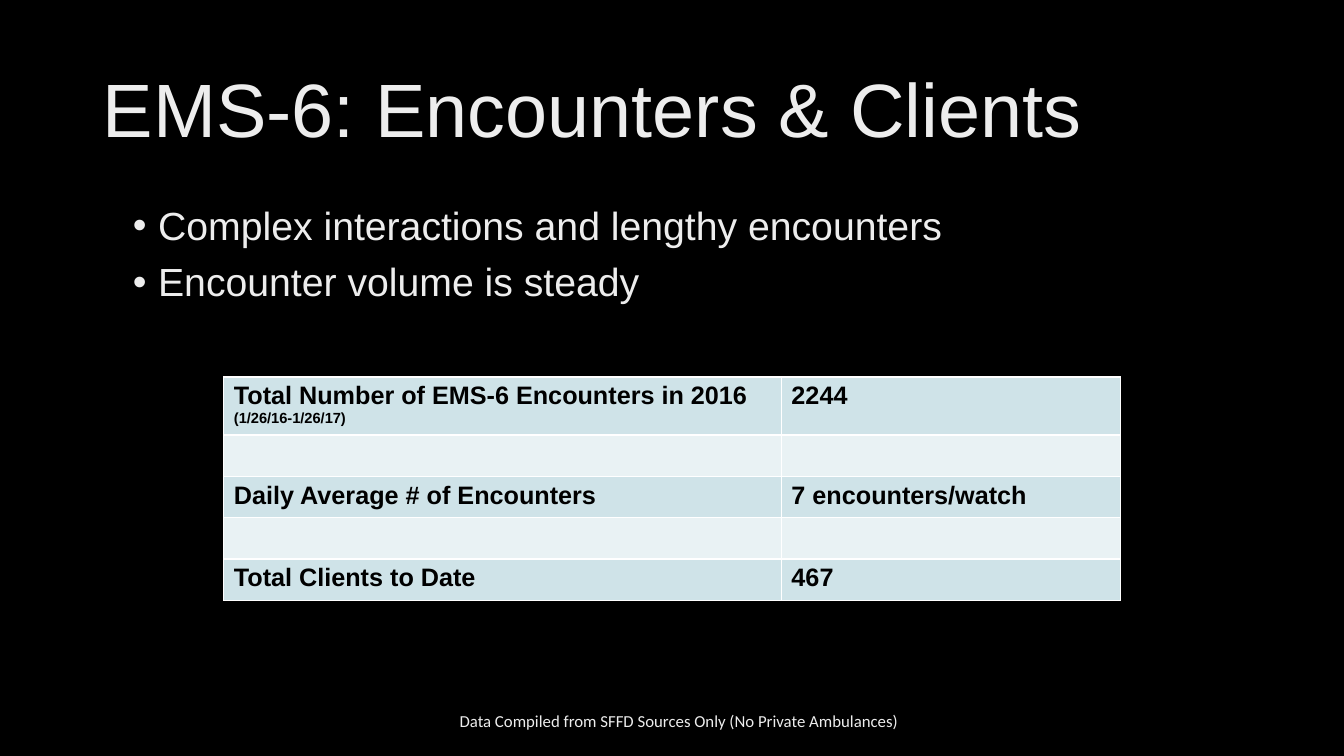
from lxml import etree
from pptx import Presentation
from pptx.dml.color import RGBColor
from pptx.enum.text import MSO_ANCHOR, PP_ALIGN
from pptx.oxml.ns import qn
from pptx.util import Pt

PX = 9144
TOP, MIDDLE = MSO_ANCHOR.TOP, MSO_ANCHOR.MIDDLE
LEFT, CENTER = PP_ALIGN.LEFT, PP_ALIGN.CENTER

PALE = "EDEDED"
BANDS = ["CFE3E8", "E9F2F4"]
TITLE = {"size": Pt(54), "name": "Arial"}
BODY = {"size": Pt(28), "name": "Arial"}
NOTE = {"size": Pt(12), "name": "Calibri"}
LABEL = {"size": Pt(18), "name": "Arial", "bold": True}
DATES = {**LABEL, "size": Pt(10.5)}

POINTS = ["Complex interactions and lengthy encounters", "Encounter volume is steady"]
ROWS = [
    (["Total Number of EMS-6 Encounters in 2016", "(1/26/16-1/26/17)"], ["2244"]),
    ([], []),
    (["Daily Average # of Encounters"], ["7 encounters/watch"]),
    ([], []),
    (["Total Clients to Date"], ["467"]),
]


def color(code):
    return RGBColor.from_string(code)


def style(item, values):
    for name, value in values.items():
        setattr(item, name, value)


def write(para, text, font, code):
    run = para.add_run()
    run.text = text
    style(run.font, font)
    run.font.color.rgb = color(code)


def add_para(frame, index):
    return frame.add_paragraph() if index else frame.paragraphs[0]


def add_frame(slide, box, anchor):
    frame = slide.shapes.add_textbox(*[n * PX for n in box]).text_frame
    style(frame, {"word_wrap": True, "vertical_anchor": anchor})
    return frame


def add_line(slide, box, text, font, align, space):
    para = add_frame(slide, box, MIDDLE).paragraphs[0]
    style(para, {"alignment": align, "line_spacing": space})
    write(para, text, font, PALE)


def add_list(slide, box, points):
    frame = add_frame(slide, box, TOP)
    for index, text in enumerate(points):
        para = add_para(frame, index)
        props = para._p.get_or_add_pPr()
        props.set("marL", str(25 * PX))
        props.set("indent", str(-25 * PX))
        etree.SubElement(props, qn("a:buFont"), typeface="Arial")
        etree.SubElement(props, qn("a:buChar"), char="•")
        style(para, {"line_spacing": 0.9, "space_before": Pt(10 if index else 0)})
        write(para, text, BODY, PALE)


def add_edges(cell):
    props = cell._tc.get_or_add_tcPr()
    for side in ("lnL", "lnR", "lnT", "lnB"):
        edge = etree.SubElement(props, qn(f"a:{side}"), w=str(Pt(1)))
        fill = etree.SubElement(edge, qn("a:solidFill"))
        etree.SubElement(fill, qn("a:srgbClr"), val="FFFFFF")


def add_grid(slide, box, rows, widths):
    frame = slide.shapes.add_table(len(rows), len(widths), *[n * PX for n in box])
    table = frame.table
    style(table, {"first_row": False, "horz_banding": False})
    for col, width in zip(table.columns, widths):
        col.width = width * PX
    for r, row in enumerate(rows):
        table.rows[r].height = box[3] // len(rows) * PX
        for c, lines in enumerate(row):
            cell = table.cell(r, c)
            add_edges(cell)
            cell.fill.solid()
            cell.fill.fore_color.rgb = color(BANDS[r % 2])
            for i, text in enumerate(lines):
                para = add_para(cell.text_frame, i)
                write(para, text, DATES if i else LABEL, "000000")


def main():
    deck = Presentation()
    style(deck, {"slide_width": 1333 * PX, "slide_height": 750 * PX})
    slide = deck.slides.add_slide(deck.slide_layouts[6])
    back = slide.background.fill
    back.solid()
    back.fore_color.rgb = color("000000")
    add_line(slide, (92, 40, 1150, 145), "EMS-6: Encounters & Clients", TITLE, LEFT, 0.9)
    add_list(slide, (122, 200, 1119, 127), POINTS)
    add_line(slide, (413, 695, 521, 40),
             "Data Compiled from SFFD Sources Only (No Private Ambulances)", NOTE, CENTER, 1.0)
    add_grid(slide, (222, 374, 889, 205), ROWS, [553, 336])
    deck.save("out.pptx")


if __name__ == "__main__":
    main()
